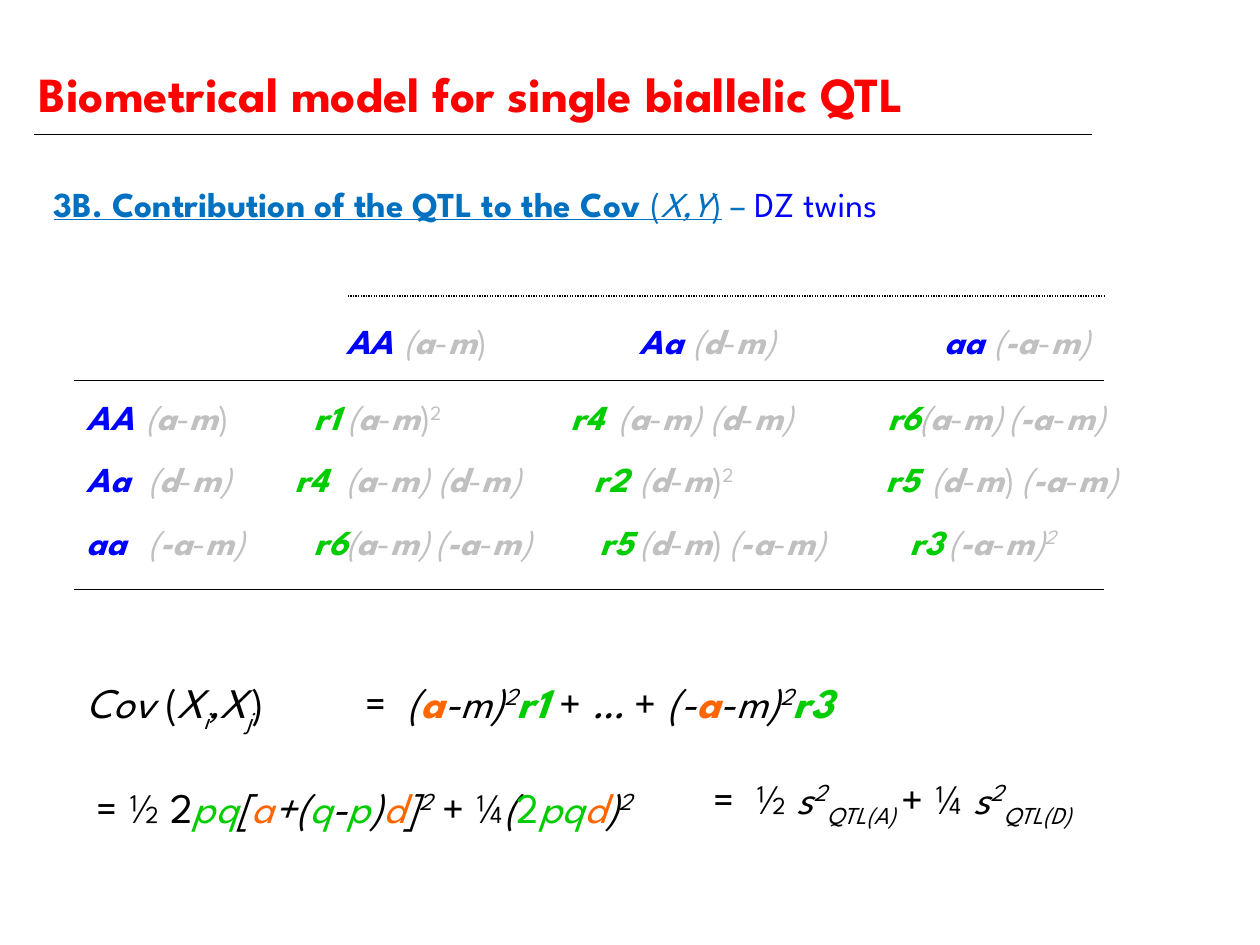
from pptx import Presentation
from pptx.dml.color import RGBColor
from pptx.enum.dml import MSO_LINE_DASH_STYLE as Dash
from pptx.enum.shapes import MSO_CONNECTOR_TYPE as Link
from pptx.enum.text import MSO_AUTO_SIZE as Fit
from pptx.oxml.ns import qn
from pptx.util import Inches, Pt
from lxml.etree import SubElement

WIDE, HIGH = Inches(10), Inches(7.5)
COLS, ROWS = 100, 75
FONT = "League Spartan"
BLACK, RED, BLUE, SKY = "000000", "FF0000", "0000FF", "0070C0"
GREEN, GOLD, GREY = "00CC00", "FF6600", "C0C0C0"
TINTS = {"g": GREEN, "o": GOLD, "v": BLUE}
SHIFT = {"^": "30000", "_": "-25000"}
SPAN = {"AA": 6, "Aa": 5.6, "aa": 5.6, "a": 8.8, "d": 8.9, "-a": 9.7}

HEAD = [(20.6, "AA"), (25.2, "a)"), (43.9, "Aa"), (48.1, "d"),
        (68.1, "aa"), (72, "-a")]
BODY = [
    [(0, "AA"), (4.7, "a)"), (18.1, "r1"), (20.7, "a)2"), (38.5, "r4"),
     (42.2, "a"), (49.5, "d"), (63.6, "r6"), (66.1, "a"), (73.2, "-a")],
    [(0, "Aa"), (4.9, "d"), (16.6, "r4"), (20.6, "a"), (27.9, "d"),
     (40.3, "r2"), (43.9, "d)2"), (63.5, "r5"), (67.1, "d)"), (74.2, "-a")],
    [(0, "aa"), (4.9, "-a"), (18.1, "r6"), (20.6, "a"), (27.7, "-a"),
     (40.8, "r5"), (43.9, "d)"), (51, "-a"), (65.4, "r3"), (68.4, "-a2")],
]


def tint(code):
    return RGBColor.from_string(code)


def col(n):
    return round(WIDE * n / COLS)


def row(n):
    return round(HIGH * n / ROWS)


def put(shapes, box, runs, size=20, color=BLACK, wrap=False, gap=None):
    x, y, w, h = box
    frame = shapes.add_textbox(col(x), row(y), col(w), row(h)).text_frame
    frame.word_wrap = wrap
    frame.auto_size = Fit.SHAPE_TO_FIT_TEXT
    para = frame.paragraphs[0]
    para.line_spacing = gap
    for text, style in runs:
        run = para.add_run()
        run.text = text
        font = run.font
        font.name, font.size = FONT, Pt(size)
        font.bold, font.italic = "b" in style, "i" in style
        font.underline = "u" in style
        font.color.rgb = tint(color)
        for mark in style:
            if mark in TINTS:
                font.color.rgb = tint(TINTS[mark])
            if mark in SHIFT:
                run._r.get_or_add_rPr().set("baseline", SHIFT[mark])


def rule(shapes, x, y, w, dash=None):
    line = shapes.add_connector(Link.STRAIGHT, col(x), row(y), col(x + w), row(y))
    line.line.color.rgb = tint(BLACK)
    line.line.width = Pt(0.75)
    if dash:
        line.line.dash_style = dash
    SubElement(line._element.spPr, qn("a:effectLst"))


def cell(shapes, x, y, code):
    if code in ("AA", "Aa", "aa"):
        put(shapes, (x, y, SPAN[code], 4.3), [(code, "bi")], color=BLUE)
    elif code[0] == "r":
        put(shapes, (x, y, 4.7, 4.4), [(code, "bi")], color=GREEN)
    else:
        name = code.rstrip(")2")
        end = "" if ")" in code else "i"
        runs = [("(", "i"), (name, "bi"), ("-", ""), ("m", "bi"), (")", end)]
        wide = SPAN[name]
        if code.endswith("2"):
            runs.append(("2", end + "^"))
            wide += 1
        put(shapes, (x, y, wide, 4.3), runs, color=GREY)


def title(shapes, box):
    x, y, w, h = box
    put(shapes, box, [("Biometrical model for single biallelic QTL", "b")],
        size=28, color=RED, wrap=True, gap=1.5)
    rule(shapes, x + 0.6, y + h + 0.5, 84)


def topic(shapes, box):
    put(shapes, box, [
        ("3B. Contribution of the QTL to the Cov ", "bu"), ("(", "u"),
        ("X,Y", "iu"), (")", "u"), (" – ", ""), ("DZ twins", "v")], color=SKY)


def grid(shapes, box):
    x, y, w, h = box
    part = shapes.add_group_shape().shapes
    rule(part, x + 21.7, y, w - 21.7, Dash.ROUND_DOT)
    rule(part, x, y + 6.7, w)
    rule(part, x, y + h, w)
    tops = [1.4] + [7.4 + 4.95 * n for n in range(len(BODY))]
    for top, line in zip(tops, [HEAD] + BODY):
        for left, code in line:
            cell(part, x + left, y + top, code)


def sums(shapes, box):
    x, y, w, h = box
    put(shapes, (x, y, 17.4, 5), [
        ("Cov", "i"), (" (", ""), ("X", "i"), ("i", "i_"), (",X", "i"),
        ("j", "i_"), (")", "")], size=24)
    put(shapes, (x + 21.3, y, 64.2, 5), [
        (" =  ", ""), ("(", "i"), ("a", "bio"), ("-m)", "i"), ("2", "i^"),
        ("r1 ", "big"), ("+ ", ""), ("…", "i"), (" + ", ""), ("(-", "i"),
        ("a", "bio"), ("-m)", "i"), ("2", "i^"), ("r3", "big")],
        size=24, wrap=True)
    put(shapes, (x + 48.9, y + 7.6, 44, 7.7), [
        (" =  ½ ", ""), ("s", "i"), ("2", "i^"), ("QTL(A) ", "i_"),
        ("+ ¼ ", ""), ("s", "i"), ("2", "i^"), ("QTL(D)", "i_")],
        size=24, wrap=True)
    put(shapes, (x + 0.8, y + 8.3, 47.8, 5), [
        ("= ½ 2", ""), ("pq", "ig"), ("[", "i"), ("a", "io"), ("+(", "i"),
        ("q", "ig"), ("-", "i"), ("p", "ig"), (")", "i"), ("d", "io"),
        ("]", "i"), ("2", "i^"), (" + ¼", ""), ("(", "i"), ("2", "g"),
        ("pq", "ig"), ("d", "io"), (")", "i"), ("2", "i^")], size=24)


def main():
    deck = Presentation()
    deck.slide_width, deck.slide_height = WIDE, HIGH
    shapes = deck.slides.add_slide(deck.slide_layouts[6]).shapes
    title(shapes, (2.1, 2.2, 85.4, 8))
    topic(shapes, (3.3, 14, 75.1, 4.4))
    grid(shapes, (5.9, 23.5, 81.7, 23.3))
    sums(shapes, (5.9, 53.2, 92.9, 15.3))
    deck.save("out.pptx")


if __name__ == "__main__":
    main()
